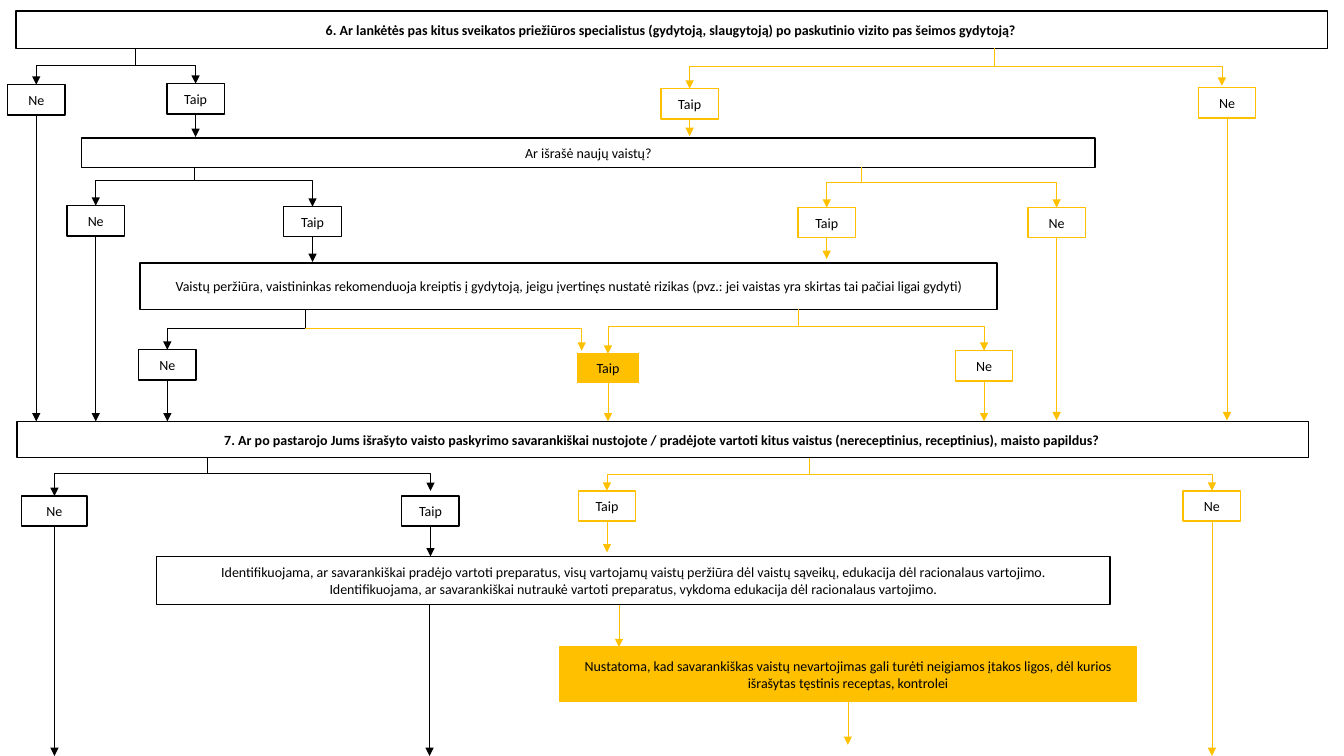
from dataclasses import dataclass

from lxml.etree import SubElement
from pptx import Presentation
from pptx.dml.color import RGBColor
from pptx.enum.shapes import MSO_CONNECTOR as LINK, MSO_SHAPE
from pptx.enum.text import MSO_ANCHOR, PP_ALIGN
from pptx.oxml.ns import qn
from pptx.util import Inches, Pt


@dataclass(frozen=True)
class Theme:
    """Colours, type and line sizes of the flowchart."""
    ink: str = "000000"
    paper: str = "FFFFFF"
    amber: str = "FFC000"
    font: str = "Calibri"
    text_size: int = 10
    border: float = 1
    arrow: float = 0.5


@dataclass(frozen=True)
class Box:
    """A rectangle in inches."""
    left: float
    top: float
    width: float
    height: float

    @property
    def bottom(self):
        """Give the lower edge."""
        return self.top + self.height


@dataclass(frozen=True)
class Answer:
    """A reply, placed from the lower left corner of its question."""
    label: str
    centre: float
    top: float
    end: float
    width: float = 0.57
    height: float = 0.3
    fill: str = Theme.paper
    entry: float = 0
    gap: float = 0


@dataclass(frozen=True)
class Branch:
    """A stem under a question that splits into replies."""
    colour: str
    stem: float
    bar: float
    answers: tuple


THEME = Theme()


def set_format(target, values):
    """Set each named attribute of the target."""
    for name, value in values.items():
        setattr(target, name, value)


def draw_box(page, box, lines, border=THEME.ink, fill=THEME.paper, bold=False):
    """Draw a bordered rectangle with centred text."""
    shape = page.shapes.add_shape(
        MSO_SHAPE.RECTANGLE, Inches(box.left), Inches(box.top),
        Inches(box.width), Inches(box.height))
    shape.shadow.inherit = False
    shape.fill.solid()
    shape.fill.fore_color.rgb = RGBColor.from_string(fill)
    shape.line.color.rgb = RGBColor.from_string(border)
    shape.line.width = Pt(THEME.border)
    frame = shape.text_frame
    set_format(frame, {"word_wrap": True, "vertical_anchor": MSO_ANCHOR.MIDDLE})
    for index, line in enumerate(lines):
        para = frame.add_paragraph() if index else frame.paragraphs[0]
        para.alignment = PP_ALIGN.CENTER
        span = para.add_run()
        span.text = line
        set_format(span.font, {"name": THEME.font, "size": Pt(THEME.text_size), "bold": bold})
        span.font.color.rgb = RGBColor.from_string(THEME.ink)


def draw_link(page, start, end, colour, arrow=True, bent=False):
    """Draw a straight line or a one-corner elbow between two points."""
    link = page.shapes.add_connector(
        LINK.ELBOW if bent else LINK.STRAIGHT, *map(Inches, (*start, *end)))
    link.line.color.rgb = RGBColor.from_string(colour)
    link.line.width = Pt(THEME.arrow)
    properties = link._element.spPr
    if bent:
        properties.find(qn("a:prstGeom")).set("prst", "bentConnector2")
    if arrow:
        SubElement(properties.find(qn("a:ln")), qn("a:tailEnd"), type="triangle")
    SubElement(properties, qn("a:effectLst"))


def draw_question(page, box, text, branches, bold=False):
    """Draw a question with the branches and replies below it."""
    draw_box(page, box, [text], bold=bold)
    for branch in branches:
        stem, bar = box.left + branch.stem, box.bottom + branch.bar
        draw_link(page, (stem, box.bottom), (stem, bar), branch.colour, arrow=False)
        for answer in branch.answers:
            centre, top = box.left + answer.centre, box.bottom + answer.top
            reply = Box(centre - answer.width / 2, top, answer.width, answer.height)
            draw_box(page, reply, [answer.label], branch.colour, answer.fill)
            draw_link(page, (stem, bar), (centre + answer.entry, top - answer.gap),
                      branch.colour, bent=True)
            draw_link(page, (centre, reply.bottom), (centre, box.bottom + answer.end),
                      branch.colour)


def draw_specialist_visits(page, box):
    """Draw question 6 about visits to other specialists."""
    draw_question(page, box, "6. Ar lankėtės pas kitus sveikatos priežiūros specialistus "
                  "(gydytoją, slaugytoją) po paskutinio vizito pas šeimos gydytoją? ", (
                      Branch(THEME.ink, 1.18, 0.17, (
                          Answer("Ne", 0.2, 0.36, 3.7), Answer("Taip", 1.78, 0.35, 0.88))),
                      Branch(THEME.amber, 9.7, 0.18, (
                          Answer("Taip", 6.68, 0.4, 0.87),
                          Answer("Ne", 12.01, 0.39, 3.69, entry=-0.05, gap=0.02)))), bold=True)


def draw_new_medicines(page, box):
    """Draw the question about newly prescribed medicines."""
    draw_question(page, box, "Ar išrašė naujų vaistų?", (
        Branch(THEME.ink, 1.12, 0.13, (
            Answer("Ne", 0.14, 0.38, 2.52), Answer("Taip", 2.29, 0.39, 0.94))),
        Branch(THEME.amber, 7.73, 0.15, (
            Answer("Taip", 7.39, 0.4, 0.91), Answer("Ne", 9.67, 0.4, 2.51)))))


def draw_medicine_review(page, box):
    """Draw the medicine review, whose two branches share a reply."""
    stem = 1.64
    bar = 0.19
    draw_question(page, box, "Vaistų peržiūra, vaistininkas rekomenduoja kreiptis į gydytoją, "
                  "jeigu įvertinęs nustatė rizikas (pvz.: jei vaistas yra skirtas tai pačiai "
                  "ligai gydyti)", (
                      Branch(THEME.ink, stem, bar, (Answer("Ne", 0.27, 0.4, 1.11),)),
                      Branch(THEME.amber, 6.53, 0.17, (
                          Answer("Taip", 4.64, 0.44, 1.11, 0.61, 0.28, THEME.amber),
                          Answer("Ne", 8.37, 0.41, 1.11)))))
    draw_link(page, (box.left + stem, box.bottom + bar),
              (box.left + 4.38, box.bottom + 0.41), THEME.amber, bent=True)


def draw_self_medication(page, box):
    """Draw question 7 about changes made by the patient."""
    draw_question(page, box, "7. Ar po pastarojo Jums išrašyto vaisto paskyrimo savarankiškai "
                  "nustojote / pradėjote vartoti kitus vaistus (nereceptinius, receptinius), "
                  "maisto papildus? ", (
                      Branch(THEME.ink, 1.89, 0.16, (
                          Answer("Ne", 0.37, 0.38, 2.96, width=0.65),
                          Answer("Taip", 4.1, 0.38, 0.98, gap=0.05))),
                      Branch(THEME.amber, 7.86, 0.17, (
                          Answer("Taip", 5.85, 0.33, 0.94),
                          Answer("Ne", 11.85, 0.33, 2.96)))), bold=True)


def draw_follow_up(page, box):
    """Draw the pharmacist's findings and the conclusion below them."""
    draw_box(page, box, [
        "Identifikuojama, ar savarankiškai pradėjo vartoti preparatus, visų vartojamų vaistų "
        "peržiūra dėl vaistų sąveikų, edukacija dėl racionalaus vartojimo.",
        "Identifikuojama, ar savarankiškai nutraukė vartoti preparatus, vykdoma edukacija dėl "
        "racionalaus vartojimo."])
    conclusion = Box(box.left + 4, box.bottom + 0.42, 5.72, 0.54)
    draw_box(page, conclusion, [
        "Nustatoma, kad savarankiškas vaistų nevartojimas gali turėti neigiamos įtakos ligos, "
        "dėl kurios išrašytas tęstinis receptas, kontrolei"], THEME.amber, THEME.amber)
    for offset, start, end, colour in (
            (2.71, box.bottom, box.bottom + 1.5, THEME.ink),
            (4.59, box.bottom, conclusion.top, THEME.amber),
            (6.86, conclusion.bottom, conclusion.bottom + 0.43, THEME.amber)):
        draw_link(page, (box.left + offset, start), (box.left + offset, end), colour)


def main():
    """Build the flowchart slide and save the deck."""
    deck = Presentation()
    set_format(deck, {"slide_width": Inches(13.33), "slide_height": Inches(7.5)})
    page = deck.slides.add_slide(deck.slide_layouts[6])
    draw_specialist_visits(page, Box(0.16, 0.11, 13.01, 0.37))
    draw_new_medicines(page, Box(0.81, 1.37, 10.05, 0.29))
    draw_medicine_review(page, Box(1.39, 2.61, 8.5, 0.46))
    draw_self_medication(page, Box(0.17, 4.18, 12.81, 0.36))
    draw_follow_up(page, Box(1.55, 5.52, 9.46, 0.48))
    deck.save("out.pptx")


if __name__ == "__main__":
    main()
